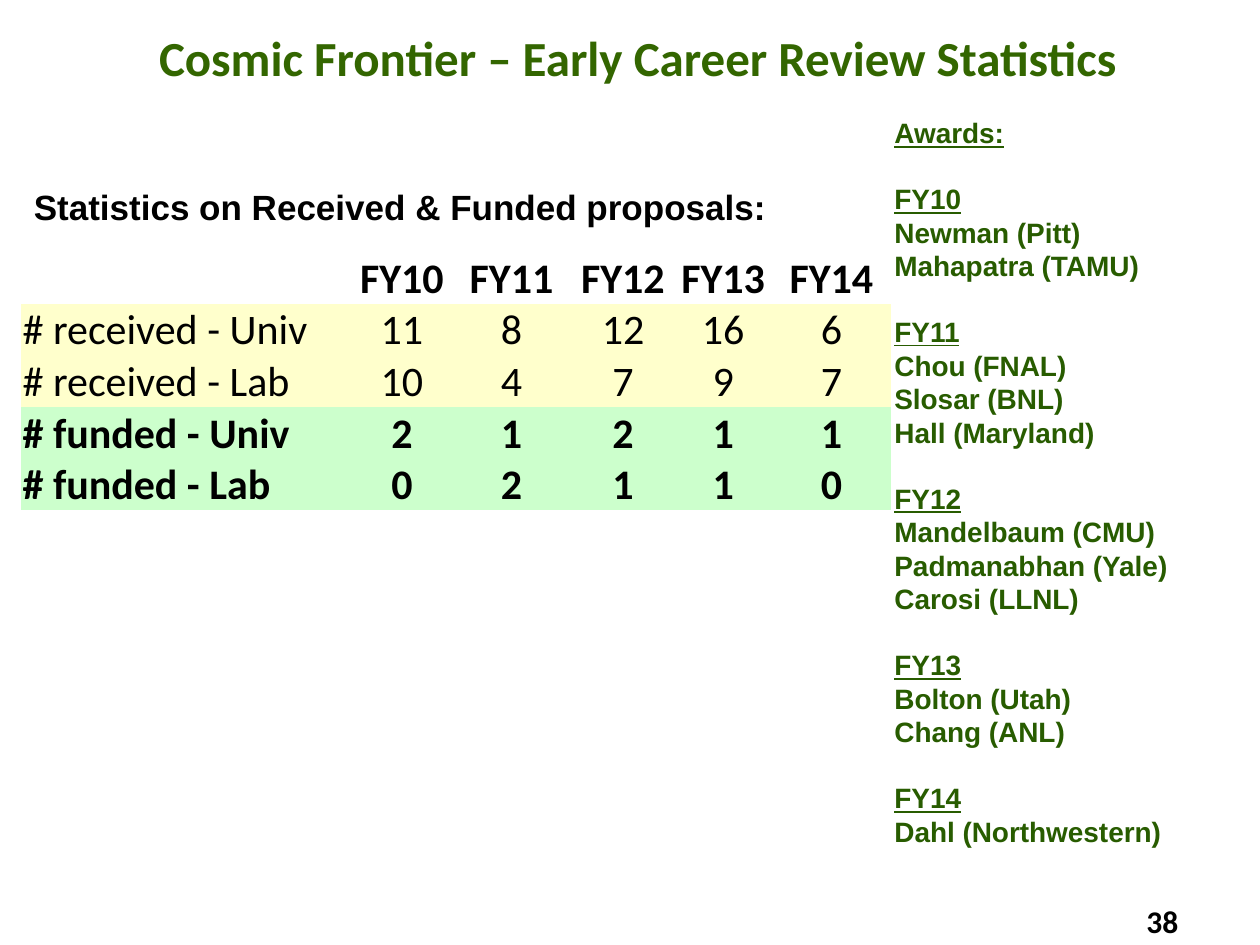
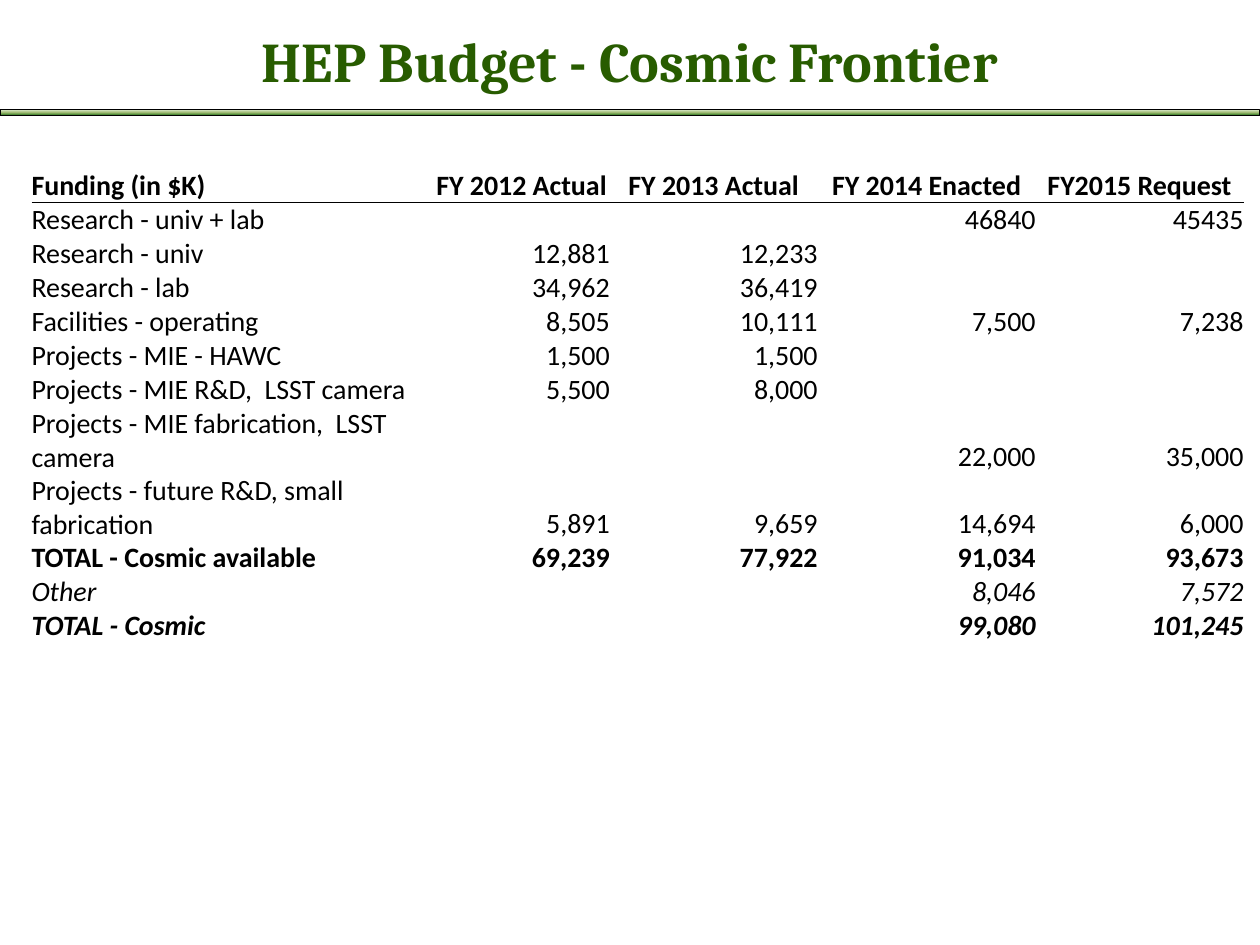
import copy

import pptx
import pptx.dml.color
import pptx.enum.shapes
import pptx.enum.text
import pptx.oxml.ns
import pptx.util
from lxml import etree

Inches = pptx.util.Inches
Pt = pptx.util.Pt
Align = pptx.enum.text.PP_ALIGN
Anchor = pptx.enum.text.MSO_ANCHOR
qn = pptx.oxml.ns.qn

COLORS = {
    "title": "336600", "green": "285C00", "text": "000000",
    "received": "FFFFCC", "funded": "CCFFCC",
    "rule_top": "DDEBCF", "rule_middle": "9CB86E", "rule_bottom": "156B13",
}
FORMATS = {
    "statistics_title": {"size": Pt(28), "name": "Calibri", "bold": True, "color": "title"},
    "budget_title": {"size": Pt(32), "name": "Cambria", "bold": True, "color": "green"},
    "award": {"size": Pt(16), "name": "Arial", "bold": True, "color": "green"},
    "caption": {"size": Pt(20), "name": "Arial", "bold": True, "color": "text"},
    "page_number": {"size": Pt(18), "name": "Calibri", "bold": True, "color": "text"},
    "statistics": {"size": Pt(24), "name": "Calibri", "color": "text"},
    "budget": {"size": Pt(16), "name": "Calibri", "color": "text"},
}
NO_STYLE = "{2D5ABB26-0587-4C30-8999-92F81FD0307C}"
BOLD = {"bold": True}
ITALIC = {"italic": True}

AWARDS = {
    "Awards:": [],
    "FY10": ["Newman (Pitt)", "Mahapatra (TAMU)"],
    "FY11": ["Chou (FNAL)", "Slosar (BNL)", "Hall (Maryland)"],
    "FY12": ["Mandelbaum (CMU)", "Padmanabhan (Yale)", "Carosi (LLNL)"],
    "FY13": ["Bolton (Utah)", "Chang (ANL)"],
    "FY14": ["Dahl (Northwestern)"],
}
STATISTICS = [
    (["", "FY10", "FY11", "FY12", "FY13", "FY14"], BOLD, None),
    (["# received - Univ", "11", "8", "12", "16", "6"], {}, "received"),
    (["# received - Lab", "10", "4", "7", "9", "7"], {}, "received"),
    (["# funded - Univ", "2", "1", "2", "1", "1"], BOLD, "funded"),
    (["# funded - Lab", "0", "2", "1", "1", "0"], BOLD, "funded"),
]
BUDGET = [
    (["Funding (in $K)", "", "FY 2012 Actual", "FY 2013 Actual", "FY 2014 Enacted", "FY2015 Request"], BOLD, None),
    (["Research - univ + lab", "", "", "", "46840", "45435"], {}, None),
    (["Research - univ", "", "12,881", "12,233", "", ""], {}, None),
    (["Research - lab", "", "34,962", "36,419", "", ""], {}, None),
    (["Facilities - operating", "", "8,505", "10,111", "7,500", "7,238"], {}, None),
    (["Projects - MIE - HAWC", "", "1,500", "1,500", "", ""], {}, None),
    (["Projects - MIE R&D,  LSST camera", "", "5,500", "8,000", "", ""], {}, None),
    (["Projects - MIE fabrication,  LSST camera", "", "", "", "22,000", "35,000"], {}, None),
    (["Projects - future R&D, small fabrication", "", "5,891", "9,659", "14,694", "6,000"], {}, None),
    (["TOTAL - Cosmic available", "", "69,239", "77,922", "91,034", "93,673"], BOLD, None),
    (["Other", "", "", "", "8,046", "7,572"], ITALIC, None),
    (["TOTAL - Cosmic", "", "", "", "99,080", "101,245"], BOLD | ITALIC, None),
]


def rgb(name):
    return pptx.dml.color.RGBColor.from_string(COLORS[name])


def write(paragraph, text, style, **extra):
    run = paragraph.add_run()
    run.text = text
    for attribute, value in (FORMATS[style] | extra).items():
        if attribute == "color":
            run.font.color.rgb = rgb(value)
        else:
            setattr(run.font, attribute, value)


def add_frame(slide, box, anchor=Anchor.TOP):
    frame = slide.shapes.add_textbox(*map(Inches, box)).text_frame
    frame.word_wrap = True
    frame.vertical_anchor = anchor
    return frame


def add_line(slide, box, text, style, align=Align.LEFT, indent=0, anchor=Anchor.TOP):
    paragraph = add_frame(slide, box, anchor).paragraphs[0]
    paragraph.alignment = align
    if indent:
        paragraph._p.get_or_add_pPr().set("marL", str(Inches(indent)))
    write(paragraph, text, style)


def add_awards(slide, box):
    frame = add_frame(slide, box)
    paragraph = frame.paragraphs[0]
    for index, (heading, winners) in enumerate(AWARDS.items()):
        if index:
            paragraph = frame.add_paragraph()
            paragraph.space_before = Pt(18.4)
        write(paragraph, heading, "award", underline=True)
        for winner in winners:
            write(frame.add_paragraph(), winner, "award")


def add_grid(slide, box, rows, widths, style, insets, body_align):
    grid = slide.shapes.add_table(len(rows), len(widths), *map(Inches, box)).table
    grid.first_row = grid.horz_banding = False
    grid._tbl.tblPr.find(qn("a:tableStyleId")).text = NO_STYLE
    for column, width in zip(grid.columns, widths):
        column.width = Inches(width)
    for row_index, (texts, emphasis, fill) in enumerate(rows):
        grid.rows[row_index].height = Inches(box[3] / len(rows))
        for column_index, text in enumerate(texts):
            cell = grid.cell(row_index, column_index)
            cell.vertical_anchor = Anchor.BOTTOM
            for side, inset in zip(("left", "top", "right", "bottom"), insets):
                setattr(cell, f"margin_{side}", Inches(inset))
            if fill:
                cell.fill.solid()
                cell.fill.fore_color.rgb = rgb(fill)
            else:
                cell.fill.background()
            paragraph = cell.text_frame.paragraphs[0]
            value_align = body_align if row_index else Align.CENTER
            paragraph.alignment = value_align if column_index else Align.LEFT
            if text:
                write(paragraph, text, style, **emphasis)
            else:
                size = int(FORMATS[style]["size"].pt * 100)
                etree.SubElement(paragraph._p, qn("a:endParaRPr"), sz=str(size))
    return grid


def underline_header(grid):
    for cell in grid.rows[0].cells:
        border = etree.Element(qn("a:lnB"), w=str(Pt(0.5)))
        solid = etree.SubElement(border, qn("a:solidFill"))
        etree.SubElement(solid, qn("a:srgbClr"), val=COLORS["text"])
        cell._tc.get_or_add_tcPr().insert(0, border)


def add_title_rule(slide, box):
    rule = slide.shapes.add_shape(pptx.enum.shapes.MSO_SHAPE.RECTANGLE, *map(Inches, box))
    rule.shadow.inherit = False
    rule.line.color.rgb = rgb("text")
    rule.line.width = Pt(0.5)
    rule.fill.gradient()
    rule.fill.gradient_angle = 270
    stops = rule._element.spPr.find(".//" + qn("a:gsLst"))
    stops.append(copy.deepcopy(stops[0]))
    shades = ("rule_top", "rule_middle", "rule_bottom")
    for index, (stop, shade) in enumerate(zip(rule.fill.gradient_stops, shades)):
        stop.position = index / 2
        stop.color.rgb = rgb(shade)


def build_statistics(slide):
    add_line(slide, (0.17, 0.17, 9.58, 0.57), "Cosmic Frontier – Early Career Review Statistics",
             "statistics_title", Align.CENTER, indent=0.2)
    add_awards(slide, (7, 0.87, 2.75, 6.02))
    add_line(slide, (0.17, 1.42, 6.46, 0.44), "Statistics on Received & Funded proposals:", "caption")
    add_line(slide, (9, 7.11, 0.58, 0.4), "38", "page_number")
    add_grid(slide, (0.17, 2, 6.89, 2.05), STATISTICS, (2.63, 0.78, 0.96, 0.81, 0.78, 0.94),
             "statistics", (0.01, 0.01, 0.01, 0), Align.CENTER)


def build_budget(slide):
    add_line(slide, (0, 0.19, 10, 0.58), "HEP Budget - Cosmic Frontier", "budget_title",
             Align.CENTER, anchor=Anchor.MIDDLE)
    add_title_rule(slide, (0, 0.87, 10, 0.05))
    grid = add_grid(slide, (0.25, 1.34, 9.64, 3.24), BUDGET, (3.07, 0.12, 1.4, 1.65, 1.73, 1.65),
                    "budget", (0, 0, 0, 0), Align.RIGHT)
    underline_header(grid)


def main():
    deck = pptx.Presentation()
    deck.slide_width, deck.slide_height = Inches(10), Inches(7.5)
    for build in (build_statistics, build_budget):
        build(deck.slides.add_slide(deck.slide_layouts[6]))
    deck.save("out.pptx")


if __name__ == "__main__":
    main()
